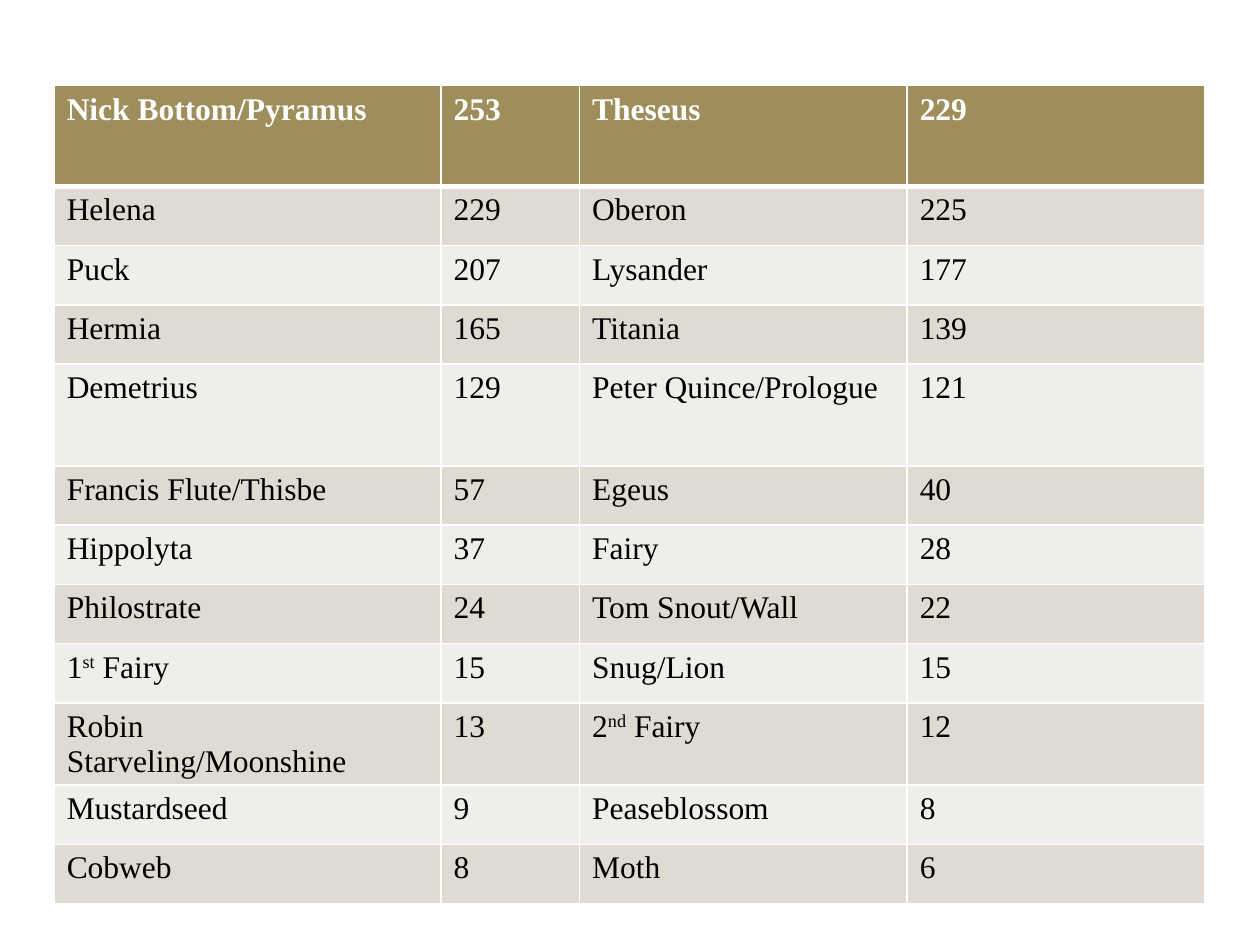
import pptx
import pptx.dml.color
import pptx.oxml
import pptx.oxml.ns
import pptx.util
from pptx.util import Inches

COLORS = {
    "header": "9E8E5C",
    "band_dark": "DFDBD2",
    "band_light": "F0EEEA",
    "white": "FFFFFF",
    "black": "000000",
}
FONT = "Times New Roman"
COLUMN_WIDTHS = [3.07, 1.1, 2.6, 2.36]
ROW_HEIGHT = 0.47
TALL_ROWS = {0: 0.8, 4: 0.81}

# Character and line count, twice per row; "^" encloses a superscript
ROLES = [
    ("Nick Bottom/Pyramus", "253", "Theseus", "229"),
    ("Helena", "229", "Oberon", "225"),
    ("Puck", "207", "Lysander", "177"),
    ("Hermia", "165", "Titania", "139"),
    ("Demetrius", "129", "Peter Quince/Prologue", "121"),
    ("Francis Flute/Thisbe", "57", "Egeus", "40"),
    ("Hippolyta", "37", "Fairy", "28"),
    ("Philostrate", "24", "Tom Snout/Wall", "22"),
    ("1^st^ Fairy", "15", "Snug/Lion", "15"),
    ("Robin Starveling/Moonshine", "13", "2^nd^ Fairy", "12"),
    ("Mustardseed", "9", "Peaseblossom", "8"),
    ("Cobweb", "8", "Moth", "6"),
]


def rgb(name):
    return pptx.dml.color.RGBColor.from_string(COLORS[name])


def set_borders(cell, bottom_width, top_width):
    """Draw white lines on the four sides; widths are in points."""
    properties = cell._tc.get_or_add_tcPr()
    widths = {"lnL": 1, "lnR": 1, "lnT": top_width, "lnB": bottom_width}
    for position, (side, width) in enumerate(widths.items()):
        line = pptx.oxml.parse_xml(
            f'<a:{side} {pptx.oxml.ns.nsdecls("a")} w="{pptx.util.Pt(width)}">'
            f'<a:solidFill><a:srgbClr val="{COLORS["white"]}"/></a:solidFill>'
            f"</a:{side}>"
        )
        properties.insert(position, line)


def write_text(cell, text, color, bold):
    paragraph = cell.text_frame.paragraphs[0]
    for position, part in enumerate(text.split("^")):
        run = paragraph.add_run()
        run.text = part
        run.font.name = FONT
        run.font.size = pptx.util.Pt(18)
        run.font.bold = bold
        run.font.color.rgb = rgb(color)
        if position % 2:
            run.font._element.set("baseline", "30000")


def format_cell(cell, text, row):
    is_header = row == 0
    fill = "header" if is_header else "band_dark" if row % 2 else "band_light"
    cell.fill.solid()
    cell.fill.fore_color.rgb = rgb(fill)
    # The rule under the header is heavier
    set_borders(cell, 3 if is_header else 1, 3 if row == 1 else 1)
    write_text(cell, text, "white" if is_header else "black", is_header)


def add_roles_table(slide):
    heights = [TALL_ROWS.get(row, ROW_HEIGHT) for row in range(len(ROLES))]
    table = slide.shapes.add_table(
        len(ROLES), len(COLUMN_WIDTHS), Inches(0.43), Inches(0.68),
        Inches(sum(COLUMN_WIDTHS)), Inches(sum(heights)),
    ).table
    for column, width in zip(table.columns, COLUMN_WIDTHS):
        column.width = Inches(width)
    for row, (texts, height) in enumerate(zip(ROLES, heights)):
        table.rows[row].height = Inches(height)
        for column, text in enumerate(texts):
            format_cell(table.cell(row, column), text, row)


def main():
    presentation = pptx.Presentation()
    presentation.slide_width = Inches(10)
    presentation.slide_height = Inches(7.5)
    slide = presentation.slides.add_slide(presentation.slide_layouts[6])
    add_roles_table(slide)
    presentation.save("out.pptx")


if __name__ == "__main__":
    main()
